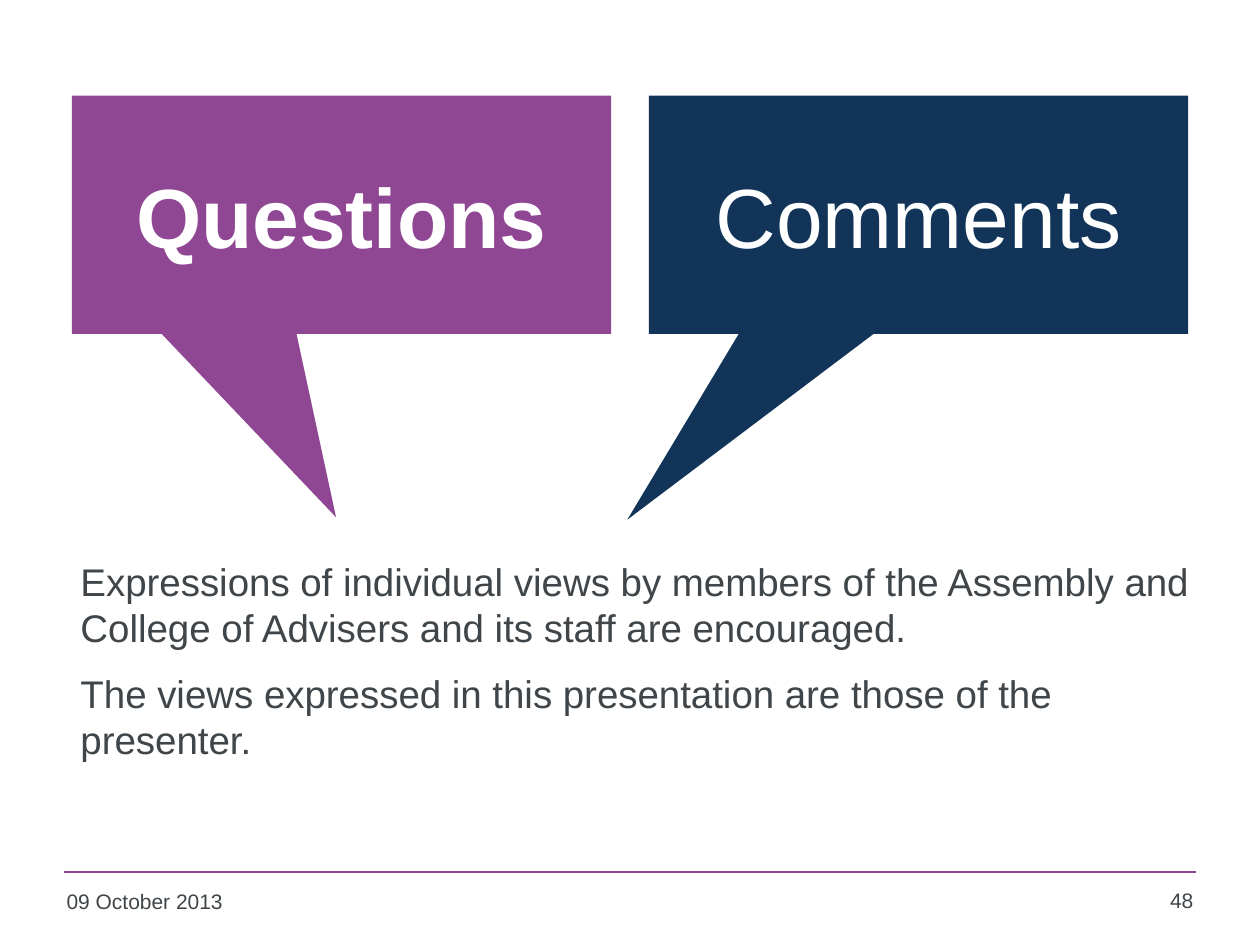
"""Build the closing slide with its two speech callouts."""
from dataclasses import dataclass

from lxml.etree import SubElement
from pptx import Presentation
from pptx.dml.color import RGBColor as Color
from pptx.enum.shapes import MSO_CONNECTOR as Link, MSO_SHAPE as Kind
from pptx.enum.text import MSO_ANCHOR as Anchor, PP_ALIGN as Align
from pptx.oxml.ns import qn
from pptx.util import Inches, Pt

WIDE, HIGH = Inches(10), Inches(7.5)


@dataclass(frozen=True)
class Theme:
    font: str = "Arial"
    plum: str = "8F4693"
    navy: str = "113458"
    ink: str = "3F4548"
    white: str = "FFFFFF"
    head: int = 48
    body: int = 22
    foot: int = 12
    gap: int = 11


@dataclass(frozen=True)
class Box:
    """Hold a place in percent of the slide's width and height."""
    x: float
    y: float
    w: float
    h: float

    def place(self) -> dict:
        return {"left": round(WIDE * self.x / 100), "top": round(HIGH * self.y / 100),
                "width": round(WIDE * self.w / 100), "height": round(HIGH * self.h / 100)}


@dataclass(frozen=True)
class Bubble:
    word: str
    hue: str
    tip: tuple[float, float]
    bold: bool


THEME = Theme()
BUBBLES = (Bubble("Questions", THEME.plum, (-0.01, 1.27), True),
           Bubble("Comments", THEME.navy, (-0.54, 1.28), False))
CARD = Box(5.7, 10.13, 42.8, 25.2)
STEP = 45.8
INSET = 2.1
VIEWS = ("Expressions of individual views by members of the Assembly and "
         "College of Advisers and its staff are encouraged.",
         "The views expressed in this presentation are those of the presenter.")


def apply(item, form: dict) -> None:
    """Set each format value on the item."""
    for name, value in form.items():
        setattr(item, name, value)


def write(shape, lines: tuple[str, ...], size: int, hue: str, bold: bool = False,
          align=Align.LEFT, anchor=Anchor.TOP, gap: int = 0) -> None:
    """Fill a shape with styled paragraphs."""
    frame = shape.text_frame
    frame.text = "\n".join(lines)
    apply(frame, {"word_wrap": True, "vertical_anchor": anchor})
    for para in frame.paragraphs:
        apply(para, {"alignment": align, "space_before": Pt(gap)})
        font = para.runs[0].font
        apply(font, {"name": THEME.font, "size": Pt(size), "bold": bold})
        font.color.rgb = Color.from_string(hue)


def label(slide, box: Box):
    """Add an empty text box."""
    return slide.shapes.add_textbox(**box.place())


def bubble(slide, box: Box, data: Bubble) -> None:
    """Draw one callout without a line or shadow."""
    shape = slide.shapes.add_shape(Kind.RECTANGULAR_CALLOUT, **box.place())
    shape.adjustments[0], shape.adjustments[1] = data.tip
    shape.fill.solid()
    shape.fill.fore_color.rgb = Color.from_string(data.hue)
    shape.line.fill.background()
    shape.shadow.inherit = False


def rule(slide, x: float, y: float, w: float) -> None:
    """Draw the line above the footer."""
    spot = Box(x, y, w, 0).place()
    left, top = spot["left"], spot["top"]
    line = slide.shapes.add_connector(Link.STRAIGHT, left, top, left + spot["width"], top)
    line.line.width = Pt(1)
    line.line.color.rgb = Color.from_string(THEME.plum)
    SubElement(line.element.spPr, qn("a:effectLst"))


def main() -> None:
    """Build and save the slide."""
    deck = Presentation()
    apply(deck, {"slide_width": WIDE, "slide_height": HIGH})
    slide = deck.slides.add_slide(deck.slide_layouts[5])
    title = slide.shapes.title

    rule(slide, 5.1, 92.27, 89.8)
    write(label(slide, Box(4.3, 93.4, 22, 4.8)), ("09 October 2013",), THEME.foot, THEME.ink)
    write(label(slide, Box(88.6, 93.3, 7.1, 4.9)), ("48",), THEME.foot, THEME.ink,
          align=Align.RIGHT)
    write(label(slide, Box(5.4, 58.4, 91.9, 34.4)), VIEWS, THEME.body, THEME.ink,
          gap=THEME.gap)

    for col, data in enumerate(BUBBLES):
        x = CARD.x + col * STEP
        bubble(slide, Box(x, CARD.y, CARD.w, CARD.h), data)
        spot = Box(x + INSET, 14.4, CARD.w - 2 * INSET, 16.67)
        if col == 0:
            text = title
            apply(text, spot.place())
            slide.shapes.element.append(text.element)
        else:
            text = label(slide, spot)
        write(text, (data.word,), THEME.head, THEME.white, data.bold,
              Align.CENTER, Anchor.MIDDLE)

    deck.save("out.pptx")


if __name__ == "__main__":
    main()
